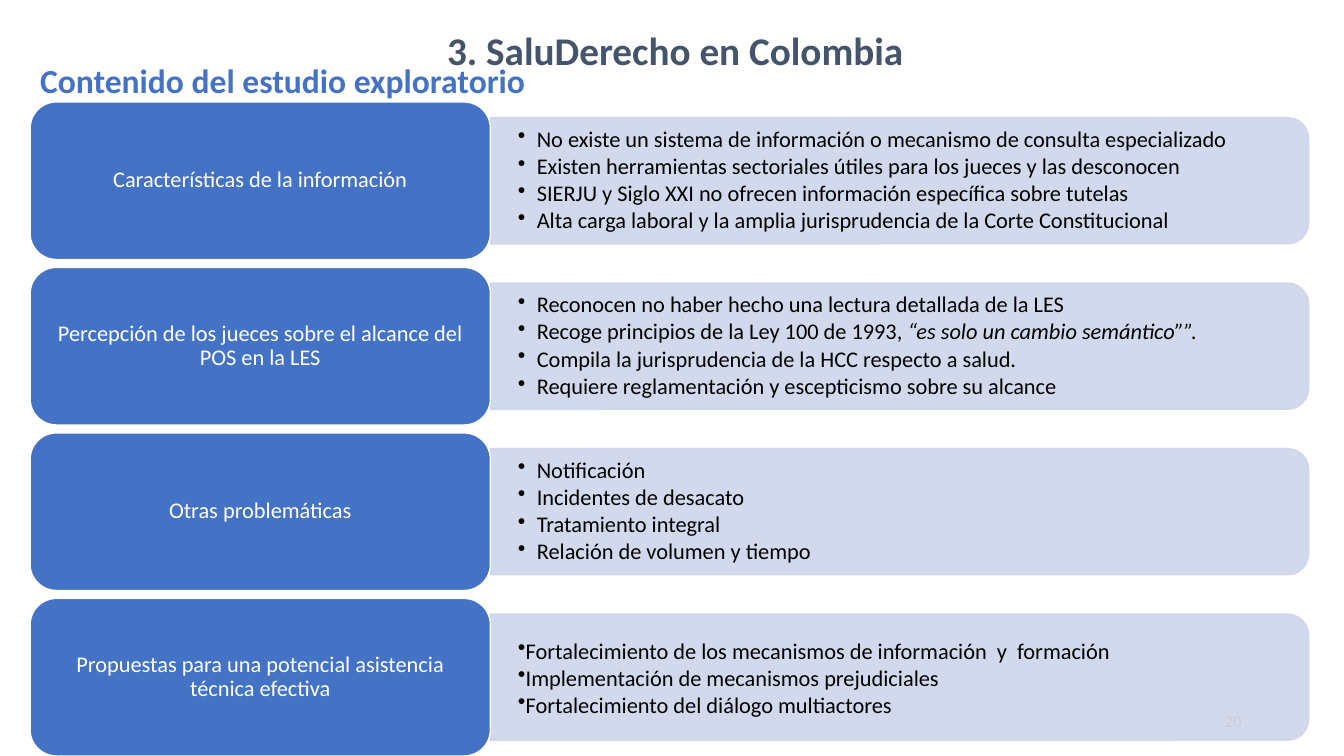
import pptx
import pptx.dml.color
import pptx.enum.shapes
import pptx.enum.text
import pptx.oxml
import pptx.oxml.ns
import pptx.util
from pptx.util import Cm, Pt

BLUE = pptx.dml.color.RGBColor(0x44, 0x72, 0xC4)
PALE_BLUE = pptx.dml.color.RGBColor(0xCF, 0xD5, 0xEA)
SLATE = pptx.dml.color.RGBColor(0x44, 0x54, 0x6A)
GREY = pptx.dml.color.RGBColor(0x89, 0x89, 0x89)
WHITE = pptx.dml.color.RGBColor(0xFF, 0xFF, 0xFF)
BLACK = pptx.dml.color.RGBColor(0x00, 0x00, 0x00)

ALIGN = pptx.enum.text.PP_ALIGN
MIDDLE = pptx.enum.text.MSO_ANCHOR.MIDDLE
SHAPES = pptx.enum.shapes.MSO_SHAPE

TOPICS = [
    ("Características de la información", [
        ["No existe un sistema de información o mecanismo de consulta especializado"],
        ["Existen herramientas sectoriales útiles para los jueces y las desconocen"],
        ["SIERJU y Siglo XXI no ofrecen información específica sobre tutelas"],
        ["Alta carga laboral y la amplia jurisprudencia de la Corte Constitucional"],
    ], True),
    ("Percepción de los jueces sobre el alcance del POS en la LES", [
        ["Reconocen no haber hecho una lectura detallada de la LES"],
        ["Recoge principios de la Ley 100 de 1993, ", "“es solo un cambio semántico””."],
        ["Compila la jurisprudencia de la HCC respecto a salud."],
        ["Requiere reglamentación y escepticismo sobre su alcance"],
    ], True),
    ("Otras problemáticas", [
        ["Notificación"],
        ["Incidentes de desacato"],
        ["Tratamiento integral"],
        ["Relación de volumen y tiempo"],
    ], True),
    ("Propuestas para una potencial asistencia técnica efectiva", [
        ["Fortalecimiento de los mecanismos de información  y  formación"],
        ["Implementación de mecanismos prejudiciales"],
        ["Fortalecimiento del diálogo multiactores"],
    ], False),
]


def write_paragraph(para, texts, font_format, para_format):
    for name, value in para_format.items():
        setattr(para, name, value)
    for position, text in enumerate(texts):
        span = para.add_run()
        span.text = text
        for name, value in font_format.items():
            if name == "color":
                span.font.color.rgb = value
            else:
                setattr(span.font, name, value)
        if position == 1:
            span.font.italic = True


def set_frame(frame, horizontal, vertical):
    frame_format = {
        "word_wrap": True, "vertical_anchor": MIDDLE,
        "margin_left": horizontal, "margin_right": horizontal,
        "margin_top": vertical, "margin_bottom": vertical,
    }
    for name, value in frame_format.items():
        setattr(frame, name, value)


deck = pptx.Presentation()
deck.slide_width = Cm(33.87)
deck.slide_height = Cm(19.05)
page = deck.slides.add_slide(deck.slide_layouts[6])

headings = [
    ("20", (23.92, 17.66, 7.62, 1.01), 12, GREY, False, ALIGN.RIGHT),
    ("Contenido del estudio exploratorio", (0.76, 1.07, 29.21, 1.9), 24, BLUE, True, ALIGN.LEFT),
    ("3. SaluDerecho en Colombia", (6.22, 0.53, 21.59, 1.47), 28, SLATE, True, ALIGN.CENTER),
]
for text, place, size, color, bold, alignment in headings:
    box = page.shapes.add_textbox(*[Cm(length) for length in place])
    set_frame(box.text_frame, Cm(0.25), Cm(0.13))
    heading_font = {"name": "Calibri", "size": Pt(size), "bold": bold, "color": color}
    write_paragraph(box.text_frame.paragraphs[0], [text], heading_font, {"alignment": alignment})

LEFT, TOP, PITCH = Cm(0.76), Cm(2.57), Cm(4.17)
LABEL_WIDTH, LABEL_HEIGHT = Cm(11.6), Cm(3.97)
PANEL_WIDTH, PANEL_HEIGHT = Cm(20.62), Cm(3.18)
PANEL_LEFT = LEFT + LABEL_WIDTH
DETAIL_HEIGHT = Cm(2.87)
label_font = {"name": "Calibri", "size": Pt(16), "color": WHITE}
detail_font = {"name": "Calibri", "size": Pt(16), "color": BLACK}

for row, (topic, details, indented) in enumerate(TOPICS):
    top = TOP + row * PITCH
    middle = top + LABEL_HEIGHT // 2

    panel = page.shapes.add_shape(
        SHAPES.ROUND_2_SAME_RECTANGLE,
        PANEL_LEFT + (PANEL_WIDTH - PANEL_HEIGHT) // 2, middle - PANEL_WIDTH // 2,
        PANEL_HEIGHT, PANEL_WIDTH)
    panel.rotation = 90
    label = page.shapes.add_shape(SHAPES.ROUNDED_RECTANGLE, LEFT, top, LABEL_WIDTH, LABEL_HEIGHT)
    for shape, fill, line in [(panel, PALE_BLUE, PALE_BLUE), (label, BLUE, WHITE)]:
        shape.shadow.inherit = False
        shape.fill.solid()
        shape.fill.fore_color.rgb = fill
        shape.line.color.rgb = line
        shape.line.width = Pt(1)
    for color_node in panel.element.spPr.iter(pptx.oxml.ns.qn("a:srgbClr")):
        alpha = color_node.makeelement(pptx.oxml.ns.qn("a:alpha"), {"val": "90000"})
        color_node.append(alpha)

    set_frame(label.text_frame, Cm(0.18), Cm(0.08))
    write_paragraph(label.text_frame.paragraphs[0], [topic], label_font,
                    {"alignment": ALIGN.CENTER, "line_spacing": 0.9})

    box = page.shapes.add_textbox(PANEL_LEFT, middle - DETAIL_HEIGHT // 2, PANEL_WIDTH, DETAIL_HEIGHT)
    set_frame(box.text_frame, Cm(0.69), Cm(0.36))
    detail_format = {"line_spacing": 0.9, "space_after": Pt(2.2)} if indented else {}
    indent = Cm(0.48) if indented else 0
    for position, texts in enumerate(details):
        para = box.text_frame.paragraphs[0] if position == 0 else box.text_frame.add_paragraph()
        write_paragraph(para, texts, detail_font, detail_format)
        properties = para._p.get_or_add_pPr()
        properties.set("marL", str(indent))
        properties.set("indent", str(-indent))
        bullet = properties.makeelement(pptx.oxml.ns.qn("a:buChar"), {"char": "•"})
        properties.append(bullet)

deck.save("out.pptx")
